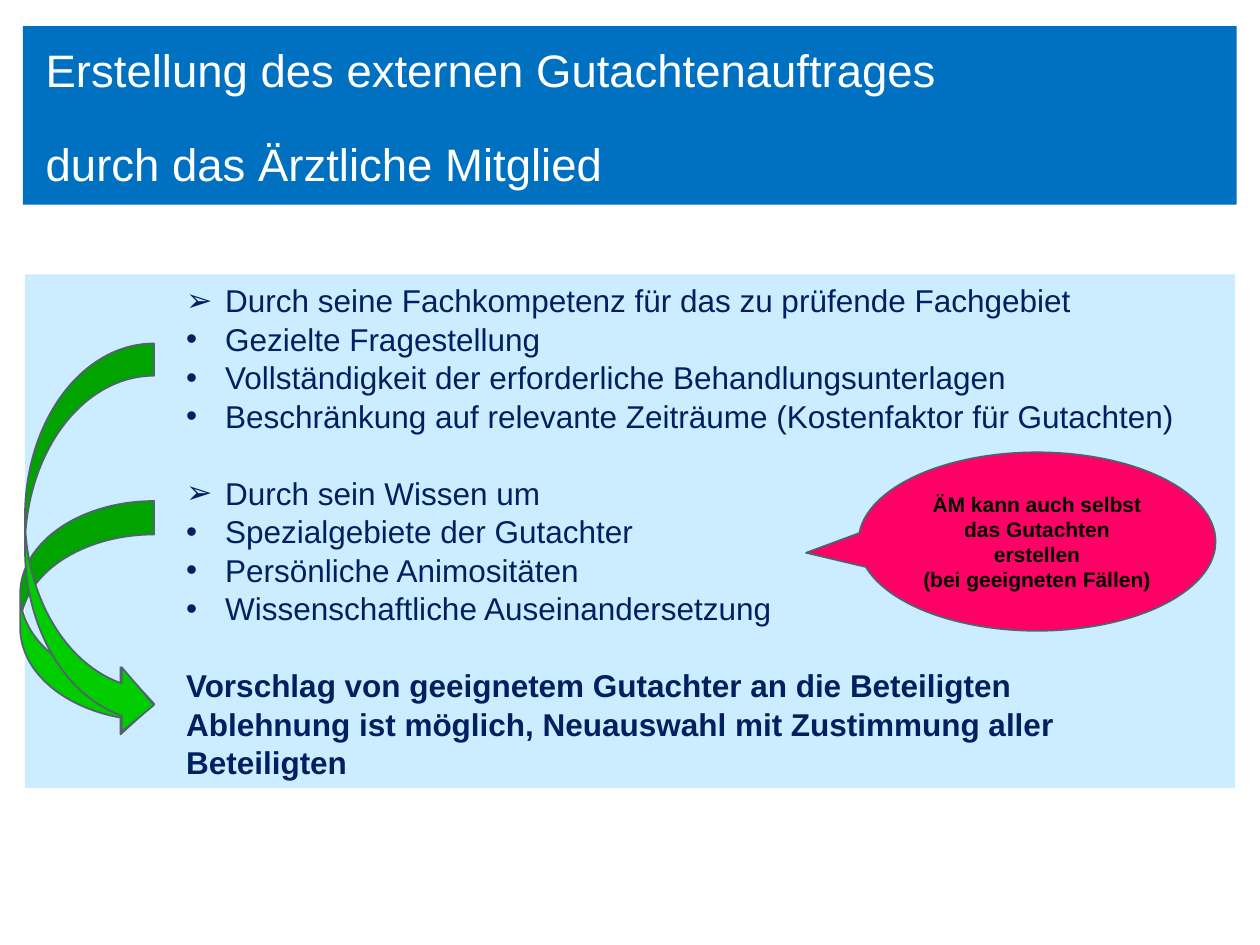
from lxml import etree
from pptx import Presentation
from pptx.dml.color import RGBColor
from pptx.enum import shapes, text
from pptx.oxml import ns
from pptx.util import Pt

FONT = "Arial"
COLORS = {
    "title_bg": "0070C0", "title_text": "FFFFFF",
    "panel": "CCECFF", "panel_text": "002060",
    "arrow": "00CC00", "outline": "51626F",
    "callout": "FF0066", "callout_text": "000000",
}
ARROW, DOT = "➢", "•"
BULLET_GROUPS = [
    ["Durch seine Fachkompetenz für das zu prüfende Fachgebiet",
     "Gezielte Fragestellung",
     "Vollständigkeit der erforderliche Behandlungsunterlagen",
     "Beschränkung auf relevante Zeiträume (Kostenfaktor für Gutachten)"],
    ["Durch sein Wissen um",
     "Spezialgebiete der Gutachter",
     "Persönliche Animositäten",
     "Wissenschaftliche Auseinandersetzung"],
]
CONCLUSION = [
    "Vorschlag von geeignetem Gutachter an die Beteiligten",
    "Ablehnung ist möglich, Neuauswahl mit Zustimmung aller Beteiligten",
]


def rgb(name):
    return RGBColor.from_string(COLORS[name])


def fill_shape(sp, fill):
    sp.fill.solid()
    sp.fill.fore_color.rgb = rgb(fill)


def add_filled(s, kind, box, fill, outline=None):
    sp = s.shapes.add_shape(kind, *map(Pt, box))
    sp.shadow.inherit = False
    fill_shape(sp, fill)
    if outline:
        sp.line.color.rgb = rgb(outline)
        sp.line.width = Pt(1)
    else:
        sp.line.fill.background()
    return sp


def next_paragraph(tf):
    """Return the first paragraph while it is empty, then new ones."""
    first = tf.paragraphs[0]
    return tf.add_paragraph() if first.runs else first


def add_run(p, words, size, color, bold=False):
    r = p.add_run()
    r.text = words
    r.font.name, r.font.size, r.font.bold = FONT, Pt(size), bold
    r.font.color.rgb = rgb(color)


def set_indent(p, left, hanging=0, bullet=None):
    pPr = p._p.get_or_add_pPr()
    pPr.set("marL", str(Pt(left)))
    pPr.set("indent", str(-Pt(hanging)))
    if bullet:
        etree.SubElement(pPr, ns.qn("a:buFont")).set("typeface", FONT)
        etree.SubElement(pPr, ns.qn("a:buChar")).set("char", bullet)
    else:
        etree.SubElement(pPr, ns.qn("a:buNone"))


def add_title(s, box):
    sp = s.shapes.title
    sp.left, sp.top, sp.width, sp.height = map(Pt, box)
    fill_shape(sp, "title_bg")
    tf = sp.text_frame
    tf.word_wrap = True
    tf.auto_size = text.MSO_AUTO_SIZE.NONE
    tf.vertical_anchor = text.MSO_ANCHOR.TOP
    tf.margin_left = tf.margin_right = tf.margin_top = tf.margin_bottom = Pt(13)
    for words in ("Erstellung des externen Gutachtenauftrages",
                  "durch das Ärztliche Mitglied"):
        p = next_paragraph(tf)
        p.alignment = text.PP_ALIGN.LEFT
        p.line_spacing = Pt(27)
        if len(tf.paragraphs) > 1:
            p.space_before = Pt(27)
        add_run(p, words, 26, "title_text")


def add_panel(s, box):
    pitch, text_left, hanging = 22, 107.3, 22.3
    sp = add_filled(s, shapes.MSO_SHAPE.RECTANGLE, box, "panel")
    tf = sp.text_frame
    tf.word_wrap = True
    tf.vertical_anchor = text.MSO_ANCHOR.TOP
    tf.margin_right = Pt(12)

    def add_line(words, gap, left, hang=0, bullet=None, bold=False):
        p = next_paragraph(tf)
        set_indent(p, left, hang, bullet)
        p.alignment = text.PP_ALIGN.LEFT
        p.line_spacing = Pt(pitch)
        if gap:
            p.space_before = Pt(pitch)
        add_run(p, words, 18, "panel_text", bold)

    for g, group in enumerate(BULLET_GROUPS):
        for i, words in enumerate(group):
            add_line(words, g > 0 and i == 0, text_left, hanging,
                     DOT if i else ARROW)
    for i, words in enumerate(CONCLUSION):
        add_line(words, i == 0, text_left - hanging, bold=True)


def add_arrows(s, box, heights):
    """Curved arrows that all end at the lower right corner of the box."""
    left, top, width, height = box
    for w, h in heights:
        add_filled(s, shapes.MSO_SHAPE.CURVED_RIGHT_ARROW,
                   (left + width - w, top + height - h, w, h),
                   "arrow", "outline")


def add_callout(s, box):
    sp = add_filled(s, shapes.MSO_SHAPE.OVAL_CALLOUT, box, "callout", "outline")
    sp.adjustments[0], sp.adjustments[1] = -0.647, 0.063
    tf = sp.text_frame
    tf.word_wrap = True
    tf.vertical_anchor = text.MSO_ANCHOR.MIDDLE
    for words in ("ÄM kann auch selbst das Gutachten erstellen",
                  "(bei geeigneten Fällen)"):
        p = next_paragraph(tf)
        p.alignment = text.PP_ALIGN.CENTER
        add_run(p, words, 12, "callout_text", bold=True)


def main():
    prs = Presentation()
    prs.slide_width, prs.slide_height = Pt(720), Pt(540)
    s = prs.slides.add_slide(prs.slide_layouts[5])
    add_title(s, (13.1, 14.9, 693.6, 102))
    add_panel(s, (14.3, 156.8, 691.6, 293.5))
    add_arrows(s, (11.5, 196.3, 76.5, 225), [(76.5, 135), (73.7, 225)])
    add_callout(s, (490.6, 258.5, 204, 102))
    prs.save("out.pptx")


if __name__ == "__main__":
    main()
